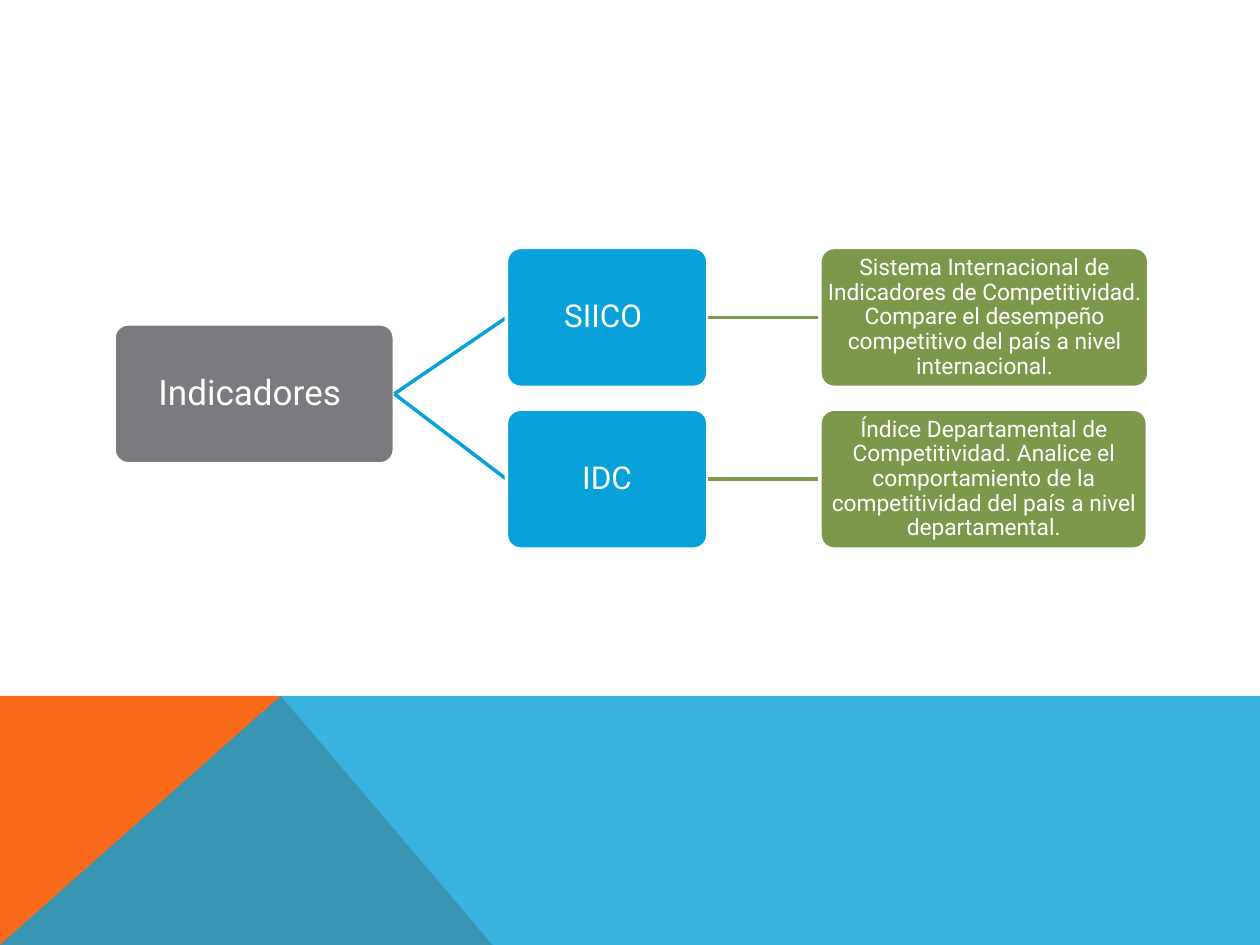
from dataclasses import dataclass

from lxml.etree import SubElement as Sub
from pptx import Presentation
from pptx.dml.color import RGBColor as Rgb
from pptx.enum.shapes import MSO_CONNECTOR as Link, MSO_SHAPE as Kind
from pptx.enum.text import MSO_ANCHOR as Anchor, PP_ALIGN as Align
from pptx.oxml.ns import qn
from pptx.util import Cm, Pt


@dataclass(frozen=True)
class Theme:
    font: str = "Roboto"
    white: str = "FFFFFF"
    gray: str = "797B7E"
    blue: str = "08A1D9"
    green: str = "7C984A"
    orange: str = "F96A1B"
    root: int = 20
    name: int = 18
    note: int = 13
    line: int = 2


THEME = Theme()
WIDE, HIGH = 25.4, 19.05
BOX, GAP, STEP = 2.82, 2.26, 3.26
LEFT, TOP, MID = 2.3, 4.99, 6.53
ROOT, NAME = 5.65, 4.06
ROWS = [
    ("SIICO ", 6.63, "Sistema Internacional de Indicadores de Competitividad. "
     "Compare el desempeño competitivo del país a nivel internacional."),
    ("IDC", 6.6, "Índice Departamental de Competitividad. Analice el "
     "comportamiento de la competitividad del país a nivel departamental."),
]


def style(item, **vals):
    for key, val in vals.items():
        setattr(item, key, val)


def paint(fill, color, alpha=None):
    fill.solid()
    fill.fore_color.rgb = Rgb.from_string(color)
    if alpha:
        node = fill._xPr.find(qn("a:solidFill"))[0]
        Sub(node, qn("a:alpha")).set("val", str(alpha * 1000))


def add_band(slide, points, color, alpha=None):
    spots = [(Cm(x), Cm(y)) for x, y in points]
    pen = slide.shapes.build_freeform(*spots[0])
    pen.add_line_segments(spots[1:], close=True)
    band = pen.convert_to_shape()
    band.shadow.inherit = False
    paint(band.fill, color, alpha)
    band.line.fill.background()


def add_box(slide, left, top, width, text, size, color):
    box = slide.shapes.add_shape(
        Kind.ROUNDED_RECTANGLE, Cm(left), Cm(top), Cm(width), Cm(BOX))
    box.adjustments[0] = 0.1
    box.shadow.inherit = False
    paint(box.fill, color)
    paint(box.line.fill, THEME.white)
    box.line.width = Pt(THEME.line)
    frame = box.text_frame
    pad = Cm(0.02)
    style(frame, word_wrap=True, vertical_anchor=Anchor.MIDDLE,
          margin_left=pad, margin_right=pad, margin_top=pad, margin_bottom=pad)
    para = frame.paragraphs[0]
    style(para, alignment=Align.CENTER, line_spacing=0.9)
    run = para.add_run()
    run.text = text
    style(run.font, name=THEME.font, size=Pt(size))
    run.font.color.rgb = Rgb.from_string(THEME.white)
    return box


def add_link(slide, start, end, color):
    link = slide.shapes.add_connector(Link.STRAIGHT, 0, 0, 0, 0)
    link.begin_connect(start, 3)
    link.end_connect(end, 1)
    paint(link.line.fill, color)
    link.line.width = Pt(THEME.line)
    Sub(link._element.spPr, qn("a:effectLst"))
    end._element.addprevious(link._element)


def add_tree(slide):
    root = add_box(slide, LEFT, MID, ROOT, "Indicadores ", THEME.root, THEME.gray)
    mid = LEFT + ROOT + GAP
    right = mid + NAME + GAP
    for row, (title, width, text) in enumerate(ROWS):
        top = TOP + row * STEP
        name = add_box(slide, mid, top, NAME, title, THEME.name, THEME.blue)
        note = add_box(slide, right, top, width, text, THEME.note, THEME.green)
        add_link(slide, root, name, THEME.blue)
        add_link(slide, name, note, THEME.green)


def main():
    deck = Presentation()
    style(deck, slide_width=Cm(WIDE), slide_height=Cm(HIGH))
    slide = deck.slides.add_slide(deck.slide_layouts[6])
    edge, peak, foot = 14.03, 5.66, 9.93
    add_band(slide, [(0, HIGH), (0, edge), (peak, edge), (foot, HIGH)],
             THEME.orange)
    add_band(slide, [(0, HIGH), (peak, edge), (WIDE, edge), (WIDE, HIGH)],
             THEME.blue, 80)
    add_tree(slide)
    deck.save("out.pptx")


if __name__ == "__main__":
    main()
